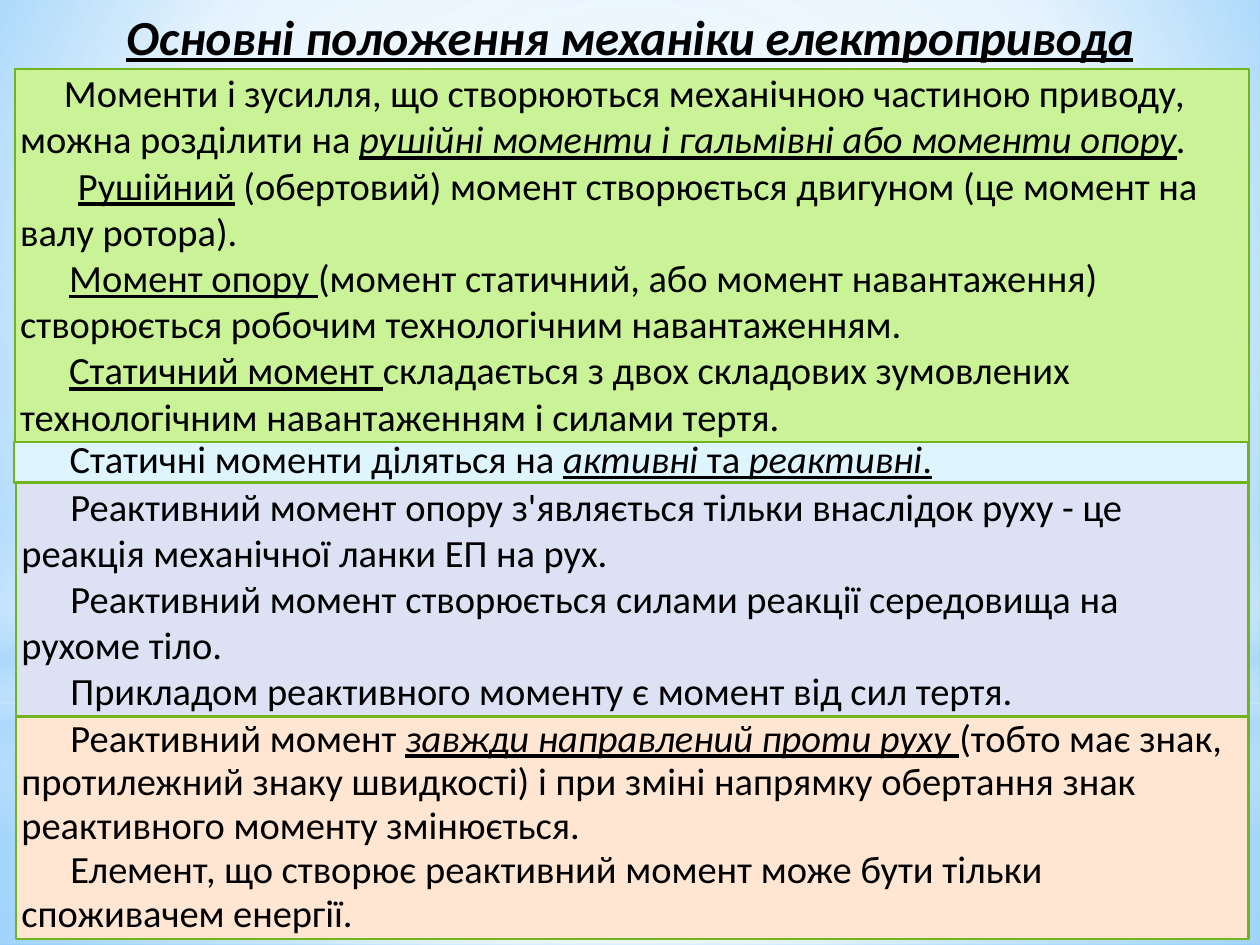
from lxml import etree
from pptx import Presentation
from pptx.dml.color import RGBColor as RGB
from pptx.enum.shapes import MSO_SHAPE as SHAPE
from pptx.enum.text import MSO_ANCHOR as ANCHOR, MSO_AUTO_SIZE as AUTO, PP_ALIGN as ALIGN
from pptx.oxml.ns import qn
from pptx.util import Pt

W, H = 720, 540
FONT = "Calibri"
COLORS = {
    "text": "000000", "line": "72B41D", "white": "FFFFFF", "haze": "B4DCFA",
    "sky": "9ED5FF", "blue": "5BB9FF", "green": "CAF297", "cyan": "DFF5FD",
    "lilac": "DCE1F4", "peach": "FFE6D3",
}

CENTER = (50, 50, 50, 50)
BACKGROUND = [(0, "sky", 100), (60, "white", 100), (100, "blue", 100)]
LAYERS = [
    (SHAPE.RECTANGLE, (0, 401.76, W, 138.24), CENTER,
     [(0, "white", 91), (37, "white", 76), (100, "haze", 79)]),
    (SHAPE.RECTANGLE, (0, 0, W, 401.76), CENTER,
     [(0, "white", 89), (48, "white", 62), (100, "haze", 79)]),
    (SHAPE.RECTANGLE, (0, 296.64, W, 180), None,
     [(0, "white", 0), (29, "white", 30), (45, "haze", 40),
      (55, "white", 26), (65, "haze", 60), (100, "white", 0)]),
    (SHAPE.OVAL, (0, 126, W, 401.76), CENTER,
     [(0, "white", 100), (56, "white", 0)]),
]

TITLE = "Основні положення механіки електропривода"
BOXES = [
    ("green", (8.64, 39.6, 704.88, 213.12), 1, [
        (25, [("Моменти і зусилля, що створюються механічною частиною приводу, "
               "можна розділити на ", ""),
              ("рушійні моменти і гальмівні або моменти опору", "iu"),
              (".", "i")]),
        (33, [("Рушійний", "u"),
              (" (обертовий) момент створюється двигуном (це момент на валу ротора).", "")]),
        (28, [("Момент опору ", "u"),
              ("(момент статичний, або момент навантаження) створюється робочим "
               "технологічним навантаженням.", "")]),
        (28, [("Статичний момент ", "u"),
              ("складається з двох складових зумовлених технологічним "
               "навантаженням і силами тертя.", "")]),
    ]),
    ("cyan", (7.92, 252.72, 705.6, 23.04), 0.85, [
        (29, [("Статичні моменти діляться на ", ""), ("активні", "iu"),
              (" та ", "u"), ("реактивні", "iu"), (".", "u")]),
    ]),
    ("lilac", (9.36, 275.76, 704.16, 133.2), 1, [
        (28, [("Реактивний момент опору з'являється тільки внаслідок руху - це "
               "реакція механічної ланки ЕП на рух.", "")]),
        (28, [("Реактивний момент створюється силами реакції середовища на "
               "рухоме тіло.", "")]),
        (28, [("Прикладом реактивного моменту є момент від сил тертя.", "")]),
    ]),
    ("peach", (9.36, 409.68, 704.16, 126.72), 0.95, [
        (28, [("Реактивний момент ", ""), ("завжди направлений проти руху", "iu"),
              (" ", "u"),
              ("(тобто має знак, протилежний знаку швидкості) і при зміні напрямку "
               "обертання знак реактивного моменту змінюється.", "")]),
        (28, [("Елемент, що створює реактивний момент може бути тільки "
               "споживачем енергії.", "")]),
    ]),
]


def color(name):
    return RGB.from_string(COLORS[name])


def set_gradient(props, stops, focus):
    grad = etree.Element(qn("a:gradFill"), rotWithShape="1")
    gs_list = etree.SubElement(grad, qn("a:gsLst"))
    for pos, name, alpha in stops:
        gs = etree.SubElement(gs_list, qn("a:gs"), pos=str(pos * 1000))
        clr = etree.SubElement(gs, qn("a:srgbClr"), val=COLORS[name])
        if alpha < 100:
            etree.SubElement(clr, qn("a:alpha"), val=str(alpha * 1000))
    if focus:
        path = etree.SubElement(grad, qn("a:path"), path="circle")
        sides = {k: str(v * 1000) for k, v in zip("ltrb", focus)}
        etree.SubElement(path, qn("a:fillToRect"), **sides)
    else:
        etree.SubElement(grad, qn("a:lin"), ang="5400000", scaled="0")
    props.replace(props.find(qn("a:solidFill")), grad)


def add_panel(s, kind, frame):
    sp = s.shapes.add_shape(kind, *map(Pt, frame))
    sp.shadow.inherit = False
    sp.fill.solid()
    return sp


def set_frame(tf, side, edge):
    tf.word_wrap = True
    tf.auto_size = AUTO.SHAPE_TO_FIT_TEXT
    tf.vertical_anchor = ANCHOR.TOP
    tf.margin_left = tf.margin_right = Pt(side)
    tf.margin_top = tf.margin_bottom = Pt(edge)


def add_run(p, text, size, style):
    r = p.add_run()
    r.text = text
    f = r.font
    f.name, f.size = FONT, Pt(size)
    f.color.rgb = color("text")
    f.bold, f.italic, f.underline = (c in style for c in "biu")


def add_box(s, fill, frame, spacing, paragraphs):
    sp = add_panel(s, SHAPE.RECTANGLE, frame)
    sp.fill.fore_color.rgb = color(fill)
    sp.line.color.rgb = color("line")
    sp.line.width = Pt(1.25)
    tf = sp.text_frame
    set_frame(tf, 2.88, 0)
    for i, (indent, runs) in enumerate(paragraphs):
        p = tf.add_paragraph() if i else tf.paragraphs[0]
        p.alignment = ALIGN.LEFT
        p.line_spacing = spacing
        pPr = p._p.get_or_add_pPr()
        pPr.set("marL", "0")
        pPr.set("indent", str(Pt(indent)))
        for text, style in runs:
            add_run(p, text, 22, style)


def main():
    prs = Presentation()
    prs.slide_width, prs.slide_height = Pt(W), Pt(H)
    s = prs.slides.add_slide(prs.slide_layouts[6])
    s.background.fill.solid()
    set_gradient(s._element.find(".//" + qn("p:bgPr")), BACKGROUND, (20, 10, 20, 60))

    for kind, frame, focus, stops in LAYERS:
        sp = add_panel(s, kind, frame)
        sp.line.fill.background()
        set_gradient(sp._element.spPr, stops, focus)

    for box in BOXES:
        add_box(s, *box)

    tf = s.shapes.add_textbox(*map(Pt, (8.64, 0, 702.72, 41.04))).text_frame
    set_frame(tf, 0, 3.6)
    p = tf.paragraphs[0]
    p.alignment = ALIGN.CENTER
    add_run(p, TITLE, 28, "biu")

    prs.save("out.pptx")


if __name__ == "__main__":
    main()
